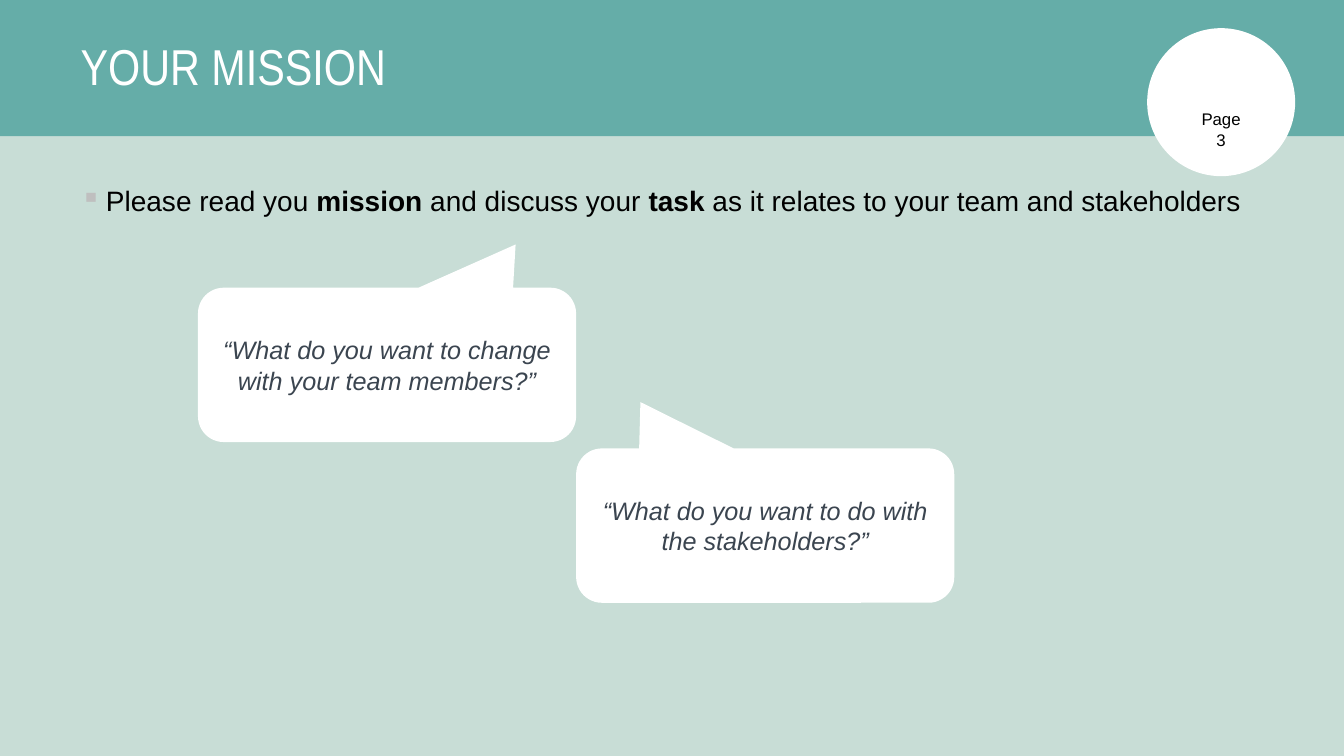
from lxml.etree import SubElement
from pptx import Presentation
from pptx.dml.color import RGBColor
from pptx.enum.shapes import MSO_SHAPE as SHAPE
from pptx.enum.text import MSO_ANCHOR as ANCHOR, PP_ALIGN as ALIGN
from pptx.oxml.ns import qn
from pptx.util import Cm, Pt

COLORS = {
    "backdrop": "B6D4CD",
    "panel": "C8DDD6",
    "header": "65ADA8",
    "white": "FFFFFF",
    "black": "000000",
    "quote": "3B4550",
    "bullet": "BFBFBF",
}
WIDTH, HEIGHT, HEADER = 33.87, 19.05, 3.43
MARGIN, TEXT_WIDTH = 1.78, 30.28
QUOTE_WIDTH, QUOTE_HEIGHT = 9.53, 3.89


class MissionSlide:
    """Hold the slide and its style, and draw each kind of element."""

    def __init__(self, prs):
        self.s = prs.slides.add_slide(prs.slide_layouts[5])
        fill = self.s.background.fill
        fill.solid()
        fill.fore_color.rgb = self.color("backdrop")

    def color(self, name):
        return RGBColor.from_string(COLORS[name])

    def run(self, p, text, size, color, font="Arial", bold=False, italic=False):
        r = p.add_run()
        r.text = text
        r.font.name, r.font.size = font, Pt(size)
        r.font.bold, r.font.italic = bold, italic
        r.font.color.rgb = self.color(color)

    def shape(self, kind, x, y, w, h, fill):
        sp = self.s.shapes.add_shape(kind, Cm(x), Cm(y), Cm(w), Cm(h))
        sp.shadow.inherit = False
        sp.fill.solid()
        sp.fill.fore_color.rgb = self.color(fill)
        sp.line.fill.background()
        return sp

    def title(self, text):
        sp = self.s.shapes.title
        sp.left, sp.top = Cm(MARGIN), Cm(0.23)
        sp.width, sp.height = Cm(TEXT_WIDTH), Cm(3.02)
        sp.element.getparent().append(sp.element)
        tf = sp.text_frame
        tf.vertical_anchor = ANCHOR.MIDDLE
        p = tf.paragraphs[0]
        p.alignment, p.line_spacing = ALIGN.LEFT, 0.9
        self.run(p, text, 36, "white", "Arial Narrow")

    def bullet(self, parts):
        sp = self.s.shapes.add_textbox(Cm(MARGIN), Cm(4.6), Cm(TEXT_WIDTH), Cm(13.11))
        tf = sp.text_frame
        tf.word_wrap = True
        p = tf.paragraphs[0]
        p.line_spacing = 0.9
        pPr = p._p.get_or_add_pPr()
        pPr.set("marL", str(Cm(0.64)))
        pPr.set("indent", str(-Cm(0.64)))
        tint = SubElement(pPr, qn("a:buClr"))
        SubElement(tint, qn("a:srgbClr"), val=COLORS["bullet"])
        SubElement(pPr, qn("a:buChar"), char="▪")
        for text, bold in parts:
            self.run(p, text, 20, "black", bold=bold)

    def page_badge(self, number):
        sp = self.shape(SHAPE.OVAL, 28.91, 0.71, 3.73, 3.73, "white")
        tf = sp.text_frame
        tf.vertical_anchor = ANCHOR.BOTTOM
        p = tf.paragraphs[0]
        p.alignment = ALIGN.CENTER
        self.run(p, "Page", 12, "black")
        p.add_line_break()
        self.run(p, number, 12, "black")

    def quote(self, text, x, y, tail_x, tail_y):
        sp = self.shape(SHAPE.ROUNDED_RECTANGULAR_CALLOUT, x, y,
                        QUOTE_WIDTH, QUOTE_HEIGHT, "white")
        sp.adjustments[0], sp.adjustments[1] = tail_x, tail_y
        tf = sp.text_frame
        tf.word_wrap = True
        tf.vertical_anchor = ANCHOR.MIDDLE
        p = tf.paragraphs[0]
        p.alignment = ALIGN.CENTER
        self.run(p, text, 18, "quote", italic=True)


def main():
    prs = Presentation()
    prs.slide_width, prs.slide_height = Cm(WIDTH), Cm(HEIGHT)
    slide = MissionSlide(prs)
    slide.shape(SHAPE.RECTANGLE, 0, HEADER, WIDTH, HEIGHT - HEADER, "panel")
    slide.shape(SHAPE.RECTANGLE, 0, 0, WIDTH, HEADER, "header")
    slide.title("YOUR MISSION")
    slide.bullet([
        ("Please read you ", False),
        ("mission", True),
        (" and discuss your ", False),
        ("task", True),
        (" as it relates to your team and stakeholders", False),
    ])
    slide.page_badge("3")
    slide.quote("“What do you want to do with the stakeholders?”",
                14.52, 11.3, -0.33, -0.8)
    slide.quote("“What do you want to change with your team members?”",
                4.99, 7.25, 0.34, -0.78)
    prs.save("out.pptx")


if __name__ == "__main__":
    main()
